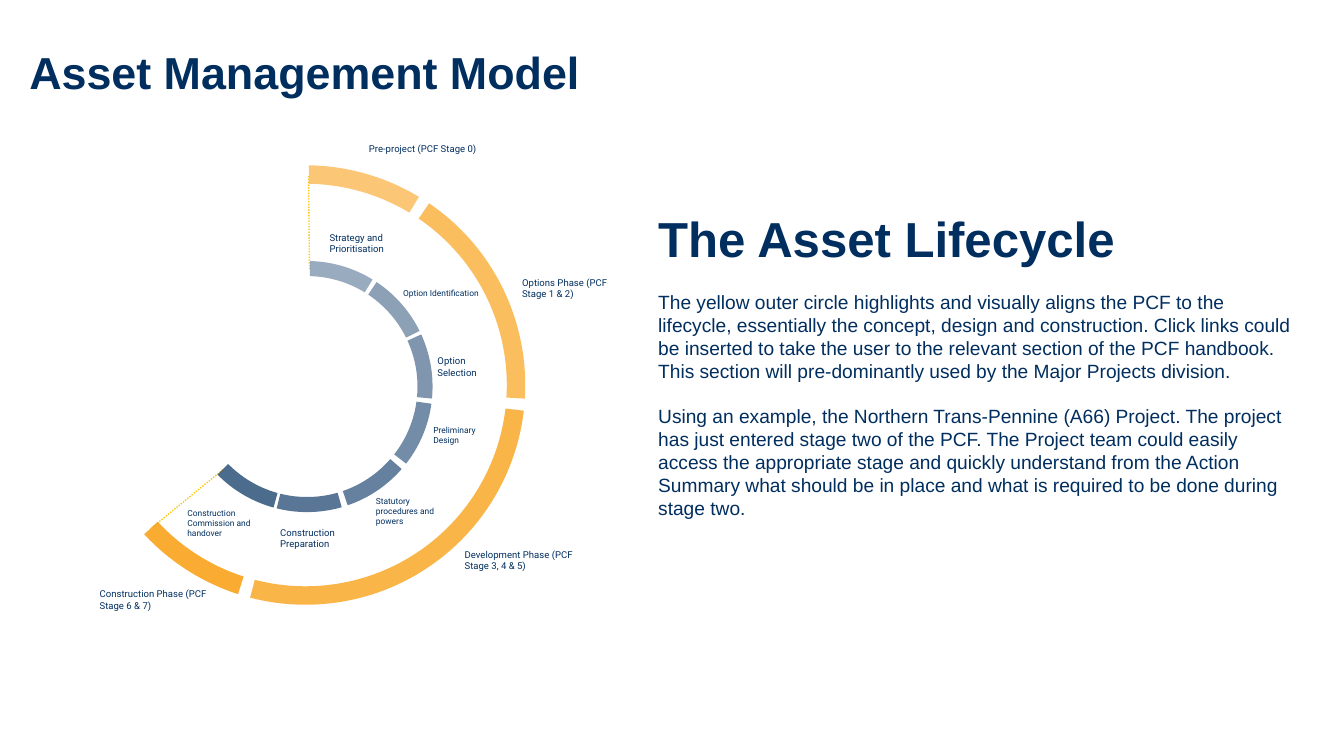
from dataclasses import dataclass

from lxml import etree
from pptx import Presentation
from pptx.dml.color import RGBColor
from pptx.enum.dml import MSO_LINE
from pptx.enum.shapes import MSO_CONNECTOR, MSO_SHAPE
from pptx.enum.text import MSO_ANCHOR, PP_ALIGN
from pptx.oxml.ns import qn
from pptx.util import Inches, Pt

STRAIGHT = MSO_CONNECTOR.STRAIGHT
BLOCK_ARC = MSO_SHAPE.BLOCK_ARC
DOTTED = MSO_LINE.ROUND_DOT
MIDDLE = MSO_ANCHOR.MIDDLE
LEFT = PP_ALIGN.LEFT


@dataclass(frozen=True)
class Theme:
    navy = RGBColor.from_string("002E5F")
    orange = RGBColor.from_string("F9A31B")
    yellow = RGBColor.from_string("FBC914")
    text_font = "Arial"
    label_font = "Roboto"
    title_size = 32
    heading_size = 35.1
    body_size = 13.7
    label_size = 6.8
    small_label_size = 6


theme = Theme()


def format_paragraph(paragraph, font_name, size, bold=False):
    paragraph.alignment = LEFT
    for run in paragraph.runs:
        run.font.name = font_name
        run.font.size = Pt(size)
        run.font.bold = bold
        run.font.color.rgb = theme.navy


def add_arc(left, top, diameter, rotation, start, end, thickness, color, opacity):
    """Add a ring segment; start and end are degrees clockwise from the right."""
    arc = slide.shapes.add_shape(
        BLOCK_ARC, Inches(left), Inches(top), Inches(diameter), Inches(diameter))
    arc.shadow.inherit = False
    arc.rotation = rotation
    # Angles are stored in 60000ths of a degree, adjustments in 100000ths
    arc.adjustments[0] = start * 0.6
    arc.adjustments[1] = end * 0.6
    arc.adjustments[2] = thickness
    arc.fill.solid()
    arc.fill.fore_color.rgb = color
    arc.line.fill.background()
    color_element = arc.fill._xPr.find(qn("a:solidFill"))[0]
    etree.SubElement(color_element, qn("a:alpha")).set("val", str(opacity * 1000))


presentation = Presentation()
presentation.slide_width = Inches(13.33)
presentation.slide_height = Inches(7.5)
slide = presentation.slides.add_slide(presentation.slide_layouts[5])

# Title
title = slide.shapes.title
title.left, title.top = Inches(0.19), Inches(0.23)
title.width, title.height = Inches(12.13), Inches(1.03)
title.text_frame.text = "Asset Management Model"
title.text_frame.vertical_anchor = MIDDLE
title.text_frame.paragraphs[0].line_spacing = 0.9
format_paragraph(title.text_frame.paragraphs[0], theme.text_font, theme.title_size, True)

# Dotted lines joining the ends of the two rings
for start_x, start_y, end_x, end_y in [(3.07, 2.67, 3.06, 1.74), (2.21, 4.66, 1.5, 5.24)]:
    connector = slide.shapes.add_connector(
        STRAIGHT, Inches(start_x), Inches(start_y), Inches(end_x), Inches(end_y))
    connector.line.color.rgb = theme.yellow
    connector.line.width = Pt(1)
    connector.line.dash_style = DOTTED
    etree.SubElement(connector._element.spPr, qn("a:effectLst"))

# Inner ring: equal lifecycle stages, growing darker
for index, rotation in enumerate([4.6, 36.8, 68.6, 101, 134.2, 167.1, 198.6]):
    add_arc(1.8, 2.59, 2.49, rotation, 266.86, 296.89, 0.06, theme.navy, 40 + 5 * index)

# Outer ring: project phases (rotation, start, end, opacity)
phases = [
    (334, 296.93, 327.08, 60),
    (6, 298.23, 357.56, 70),
    (69, 297.71, 35.59, 80),
    (68, 39.89, 69.21, 90),
]
for rotation, start, end, opacity in phases:
    add_arc(0.85, 1.64, 4.36, rotation, start, end, 0.042, theme.orange, opacity)

# Ring labels
normal, small = theme.label_size, theme.small_label_size
labels = [
    ("Strategy and Prioritisation", 3.17, 2.19, 1.07, 0.44, normal),
    ("Option Identification", 3.9, 2.7, 1.04, 0.41, small),
    ("Option Selection", 4.24, 3.42, 0.81, 0.44, normal),
    ("Preliminary Design", 4.2, 4.17, 0.74, 0.3, small),
    ("Statutory procedures and powers", 3.63, 4.8, 0.85, 0.54, small),
    ("Construction Preparation", 2.68, 5.12, 1.05, 0.44, normal),
    ("Construction Commission and handover", 1.76, 4.92, 1.05, 0.54, small),
    ("Pre-project (PCF Stage 0)", 3.56, 1.26, 1.31, 0.44, normal),
    ("Options Phase (PCF Stage 1 & 2)", 5.08, 2.64, 1.3, 0.44, normal),
    ("Development Phase (PCF Stage 3, 4 & 5)", 4.51, 5.34, 1.5, 0.44, normal),
    ("Construction Phase (PCF Stage 6 & 7)", 0.89, 5.73, 1.4, 0.44, normal),
]
for text, left, top, width, height, size in labels:
    label = slide.shapes.add_textbox(Inches(left), Inches(top), Inches(width), Inches(height))
    label.text_frame.word_wrap = True
    label.text_frame.vertical_anchor = MIDDLE
    label.text_frame.text = text
    format_paragraph(label.text_frame.paragraphs[0], theme.label_font, size)

# Explanation
explanation = slide.shapes.add_textbox(Inches(6.43), Inches(2.02), Inches(6.51), Inches(3.25))
explanation.text_frame.word_wrap = True
explanation.text_frame.text = "\n".join([
    "The Asset Lifecycle",
    "The yellow outer circle highlights and visually aligns the PCF to the lifecycle, "
    "essentially the concept, design and construction. Click links could be inserted to "
    "take the user to the relevant section of the PCF handbook. This section will "
    "pre-dominantly used by the Major Projects division.",
    "Using an example, the Northern Trans-Pennine (A66) Project. The project has just "
    "entered stage two of the PCF. The Project team could easily access the appropriate "
    "stage and quickly understand from the Action Summary what should be in place and "
    "what is required to be done during stage two.",
])
heading, *body = explanation.text_frame.paragraphs
format_paragraph(heading, theme.text_font, theme.heading_size, True)
for paragraph in body:
    paragraph.space_before = Pt(16)
    format_paragraph(paragraph, theme.text_font, theme.body_size)

presentation.save("out.pptx")
